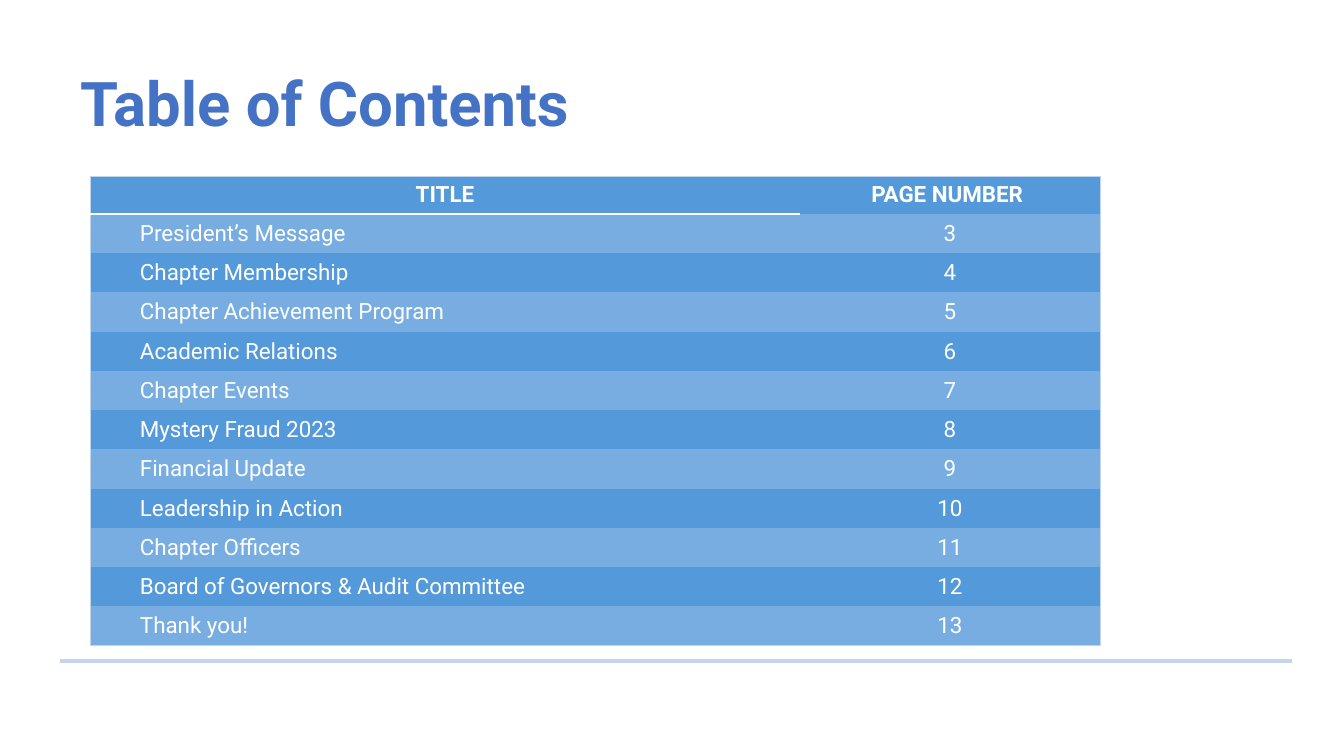
"""Build the table of contents slide of a chapter report."""
from lxml.etree import SubElement
from pptx import Presentation
from pptx.dml.color import RGBColor
from pptx.enum.shapes import MSO_CONNECTOR
from pptx.enum.text import MSO_ANCHOR, MSO_AUTO_SIZE, PP_ALIGN
from pptx.oxml.ns import qn
from pptx.util import Emu, Pt

EMU_PER_PX = 12192000 / 1344
FONT = "Roboto"
NO_GRID_STYLE = "{2D5ABB26-0587-4C30-8999-92F81FD0307C}"
COLORS = {
    "title": "4472C4",
    "rule": "C7D5EC",
    "row": "5499DA",
    "band": "77ADE1",
    "border": "C4D5EB",
    "white": "FFFFFF",
}
HEADERS = ("TITLE", "PAGE NUMBER ")
FIRST_PAGE = 3
SECTIONS = (
    "President’s Message",
    "Chapter Membership",
    "Chapter Achievement Program",
    "Academic Relations",
    "Chapter Events",
    "Mystery Fraud 2023",
    "Financial Update",
    "Leadership in Action",
    "Chapter Officers",
    "Board of Governors & Audit Committee",
    "Thank you!",
)


def px(length):
    """Turn pixels into EMU."""
    return Emu(round(length * EMU_PER_PX))


def color(name):
    """Look up a named colour."""
    return RGBColor.from_string(COLORS[name])


def format_runs(paragraph, size, color_name, bold):
    """Set the font of every run in a paragraph."""
    for run in paragraph.runs:
        run.font.name = FONT
        run.font.size = Pt(size)
        run.font.bold = bold
        run.font.color.rgb = color(color_name)


def add_rule(slide, left, right, y):
    """Draw the horizontal rule at the foot of the slide."""
    rule = slide.shapes.add_connector(
        MSO_CONNECTOR.STRAIGHT, px(left), px(y), px(right), px(y))
    rule.line.color.rgb = color("rule")
    rule.line.width = Pt(3.5)
    SubElement(rule._element.spPr, qn("a:effectLst"))


def set_title(slide, text):
    """Place and format the slide title."""
    title = slide.shapes.title
    title.left, title.top, title.width, title.height = map(px, (70, 49, 871, 116))
    frame = title.text_frame
    frame.text = text
    frame.word_wrap = True
    frame.auto_size = MSO_AUTO_SIZE.NONE
    frame.vertical_anchor = MSO_ANCHOR.MIDDLE
    paragraph = frame.paragraphs[0]
    paragraph.alignment = PP_ALIGN.LEFT
    paragraph.line_spacing = 0.9
    format_runs(paragraph, 44, "title", True)


def set_borders(cell, borders):
    """Add cell borders given as side: (colour name, points)."""
    properties = cell._tc.get_or_add_tcPr()
    sides = [side for side in "LRTB" if side in borders]
    for index, side in enumerate(sides):
        color_name, points = borders[side]
        line = SubElement(properties, qn(f"a:ln{side}"), w=str(Pt(points)))
        fill = SubElement(line, qn("a:solidFill"))
        SubElement(fill, qn("a:srgbClr"), val=COLORS[color_name])
        properties.insert(index, line)


def fill_cell(cell, text, fill_name, centered, bold):
    """Write one table cell."""
    cell.fill.solid()
    cell.fill.fore_color.rgb = color(fill_name)
    cell.margin_left = px(0 if centered else 50)
    cell.margin_right = cell.margin_top = cell.margin_bottom = 0
    cell.vertical_anchor = MSO_ANCHOR.MIDDLE
    cell.text_frame.text = text
    paragraph = cell.text_frame.paragraphs[0]
    paragraph.alignment = PP_ALIGN.CENTER if centered else PP_ALIGN.LEFT
    format_runs(paragraph, 16, "white", bold)


def add_contents_table(slide):
    """Add the banded table of sections and page numbers."""
    rows = [HEADERS] + [(section, str(page))
                        for page, section in enumerate(SECTIONS, FIRST_PAGE)]
    last = len(rows) - 1
    table = slide.shapes.add_table(
        len(rows), 2, px(90), px(176), px(1010), px(470)).table
    table.first_row = table.horz_banding = False
    table._tbl.tblPr.find(qn("a:tableStyleId")).text = NO_GRID_STYLE
    table.columns[0].width, table.columns[1].width = px(710), px(300)
    for row_index, texts in enumerate(rows):
        is_header = row_index == 0
        table.rows[row_index].height = px(38 if is_header else 432 / last)
        for column_index, text in enumerate(texts):
            cell = table.cell(row_index, column_index)
            fill_cell(cell, text, "band" if row_index % 2 else "row",
                      is_header or column_index == 1, is_header)
            borders = {"LR"[column_index]: ("border", 0.5)}
            if is_header:
                borders["T"] = ("border", 0.5)
            if is_header and column_index == 0:
                borders["B"] = ("white", 1.5)
            if row_index == last:
                borders["B"] = ("border", 0.5)
            set_borders(cell, borders)


def main():
    """Build and save the slide."""
    presentation = Presentation()
    presentation.slide_width, presentation.slide_height = px(1344), px(756)
    slide = presentation.slides.add_slide(presentation.slide_layouts[5])
    add_rule(slide, 60, 1292, 661)
    set_title(slide, "Table of Contents")
    add_contents_table(slide)
    presentation.save("out.pptx")


if __name__ == "__main__":
    main()
